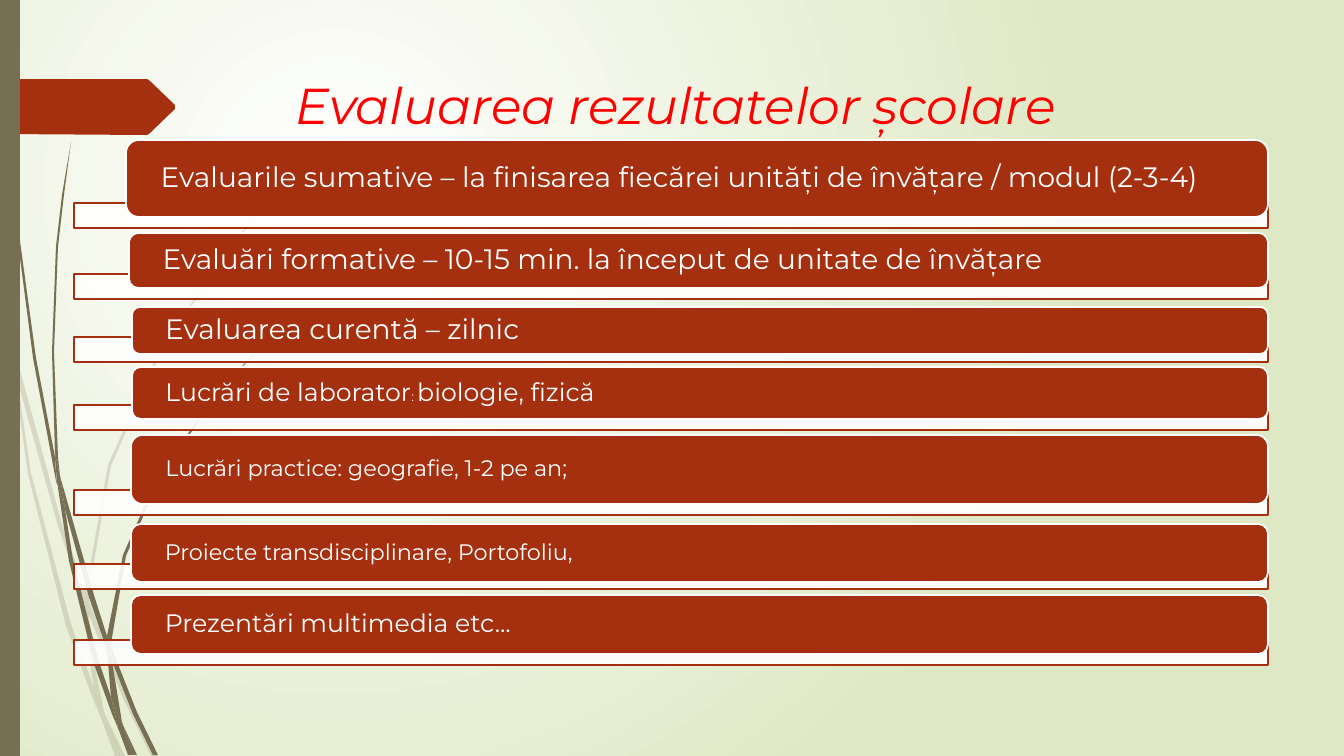
import pptx
import pptx.enum.shapes
import pptx.enum.text
import pptx.oxml
import pptx.oxml.ns
import pptx.util

PX = 914400 / 100.8
COLORS = {"olive": "766F54", "rust": "A53010", "white": "FFFFFF",
          "red": "FF0000", "pale": "DFE8C4"}
SHAPES = pptx.enum.shapes.MSO_SHAPE
qn = pptx.oxml.ns.qn

presentation = pptx.Presentation()
presentation.slide_width = round(1344 * PX)
presentation.slide_height = round(756 * PX)
slide = presentation.slides.add_slide(presentation.slide_layouts[6])


def paint(shape, fill, line=None, opacity=100):
    """Give a shape a flat fill, an optional outline and no shadow."""
    shape.shadow.inherit = False
    shape.fill.solid()
    shape.fill.fore_color.rgb = pptx.dml.color.RGBColor.from_string(COLORS[fill])
    if opacity < 100:
        color = shape.fill._xPr.find(".//" + qn("a:srgbClr"))
        alpha = color.makeelement(qn("a:alpha"), {"val": str(opacity * 1000)})
        color.append(alpha)
    if line:
        shape.line.color.rgb = pptx.dml.color.RGBColor.from_string(COLORS[line])
        shape.line.width = pptx.util.Pt(1.25)
    else:
        shape.line.fill.background()


def write(shape, runs, color, inset, **formats):
    """Fill a shape with one left-aligned paragraph of (text, size) runs."""
    frame = shape.text_frame
    frame_formats = {"word_wrap": True, "margin_left": round(inset * PX),
                     "margin_right": round(inset * PX), **formats}
    for name, value in frame_formats.items():
        setattr(frame, name, value)
    paragraph = frame.paragraphs[0]
    paragraph.alignment = pptx.enum.text.PP_ALIGN.LEFT
    for text, size in runs:
        run = paragraph.add_run()
        run.text = text
        run.font.name = "Montserrat"
        run.font.size = pptx.util.Pt(size)
        run.font.color.rgb = pptx.dml.color.RGBColor.from_string(COLORS[color])
    return paragraph


# Background: white centre fading to pale green
background = slide.background.fill
background.gradient()
for stop, name in zip(background.gradient_stops, ["white", "pale"]):
    stop.color.rgb = pptx.dml.color.RGBColor.from_string(COLORS[name])
gradient = slide.element.find(".//" + qn("a:gradFill"))
gradient.replace(gradient.find(qn("a:lin")), pptx.oxml.parse_xml(
    '<a:path xmlns:a="http://schemas.openxmlformats.org/drawingml/2006/main" path="circle">'
    '<a:fillToRect l="50000" t="50000" r="100000" b="100000"/></a:path>'))

# Grass blades and the title arrow
FAINT_BLADES = [
    [(11, 353), (9, 325), (0, 284), (0, 301), (10, 347)],
    [(58, 526), (85, 604), (86, 591), (62, 524), (14, 348), (17, 379)],
    [(93, 612), (89, 601), (89, 615), (124, 700), (151, 756), (156, 756), (128, 698)],
    [(120, 756), (125, 756), (106, 717)],
    [(94, 688), (71, 624), (31, 473), (17, 379), (11, 353), (28, 474), (66, 626),
     (93, 699), (102, 720), (100, 713)],
    [(85, 604), (88, 651), (94, 688), (97, 698), (106, 717), (104, 712), (92, 651),
     (89, 615), (89, 613)],
    [(89, 589), (111, 466), (161, 352), (231, 247), (270, 200), (292, 176), (314, 155),
     (314, 154), (291, 176), (270, 199), (230, 246), (159, 351), (108, 465), (86, 589),
     (86, 591), (89, 601)],
    [(102, 720), (115, 756), (120, 756)],
    [(89, 613), (89, 615), (89, 601), (86, 591), (85, 604)],
    [(97, 698), (94, 688), (100, 713), (102, 720), (120, 756), (106, 717)],
]
DARK_BLADES = [
    [(7, 111), (17, 235), (33, 358), (56, 481), (57, 485), (55, 461), (55, 457),
     (36, 358), (19, 234), (8, 110), (5, 48), (4, 0), (3, 0), (4, 48)],
    [(89, 597), (107, 650), (107, 638), (107, 636), (94, 595), (60, 476), (65, 509)],
    [(114, 654), (111, 646), (112, 661), (133, 714), (153, 755), (158, 755), (137, 712)],
    [(111, 697), (99, 662), (73, 560), (65, 509), (57, 481), (69, 561), (94, 664),
     (112, 714), (118, 728), (117, 723)],
    [(60, 476), (58, 457), (54, 352), (58, 247), (64, 195), (71, 142), (62, 195),
     (56, 247), (52, 352), (55, 453)],
    [(134, 755), (137, 755), (123, 725)],
    [(57, 481), (65, 509), (60, 476), (55, 453), (55, 457)],
    [(112, 638), (126, 556), (159, 480), (207, 409), (233, 377), (247, 362), (263, 347),
     (262, 347), (247, 361), (233, 376), (206, 408), (157, 478), (123, 555), (107, 636),
     (111, 646)],
    [(118, 728), (128, 755), (132, 755)],
    [(107, 650), (111, 697), (117, 712), (123, 725), (122, 722), (112, 661), (110, 656)],
    [(107, 650), (110, 656), (112, 661), (111, 646), (107, 636)],
    [(117, 712), (111, 697), (117, 723), (118, 728), (131, 755), (134, 755), (123, 725)],
]
TITLE_ARROW = [(0, 79), (147, 79), (149, 80), (175, 105), (175, 109), (149, 134),
               (147, 135), (0, 134)]

outlines = [(blade, "olive", 20) for blade in FAINT_BLADES]
outlines += [(blade, "olive", 100) for blade in DARK_BLADES]
outlines.append((TITLE_ARROW, "rust", 100))
for points, fill, opacity in outlines:
    builder = slide.shapes.build_freeform(*points[0], scale=PX)
    builder.add_line_segments(points[1:], close=True)
    paint(builder.convert_to_shape(), fill, opacity=opacity)

side_band = slide.shapes.add_shape(SHAPES.RECTANGLE, 0, 0, round(20 * PX), round(756 * PX))
paint(side_band, "olive")

title = slide.shapes.add_textbox(*[round(n * PX) for n in (286, 69, 983, 141)])
title_paragraph = write(title, [("Evaluarea rezultatelor școlare", 36)], "red", 10)
title_paragraph.font.italic = True
title_paragraph.runs[0].font.italic = True

# Evaluation types: bar top, then label left, top and height, then text runs
RIGHT = 1268
EVALUATIONS = [
    (203, 126, 140, 77,
     [("Evaluarile sumative – la finisarea fiecărei unități de învățare / modul (2-3-4)", 20)]),
    (274, 129, 233, 55,
     [("Evaluări formative – 10-15 min. la început de unitate de învățare", 20)]),
    (337, 132, 307, 47, [("Evaluarea curentă – zilnic", 20)]),
    (405, 132, 367, 52,
     [("Lucrări de laborator", 18), (": ", 9), ("biologie, fizică", 18)]),
    (490, 131, 435, 69, [("Lucrări practice: geografie, 1-2 pe an;", 16)]),
    (564, 131, 524, 58, [("Proiecte transdisciplinare, Portofoliu,", 16)]),
    (640, 131, 595, 59, [("Prezentări multimedia etc...", 18)]),
]
for bar_top, left, top, height, runs in EVALUATIONS:
    bar = slide.shapes.add_shape(
        SHAPES.RECTANGLE, *[round(n * PX) for n in (74, bar_top, RIGHT - 74, 25)])
    paint(bar, "white", "rust", opacity=90)
    label = slide.shapes.add_shape(
        SHAPES.ROUNDED_RECTANGLE, *[round(n * PX) for n in (left, top, RIGHT - left, height)])
    paint(label, "rust", "white")
    paragraph = write(label, runs, "white", 31, margin_top=0, margin_bottom=0,
                      vertical_anchor=pptx.enum.text.MSO_ANCHOR.MIDDLE)
    paragraph.line_spacing = 0.9

presentation.save("out.pptx")
